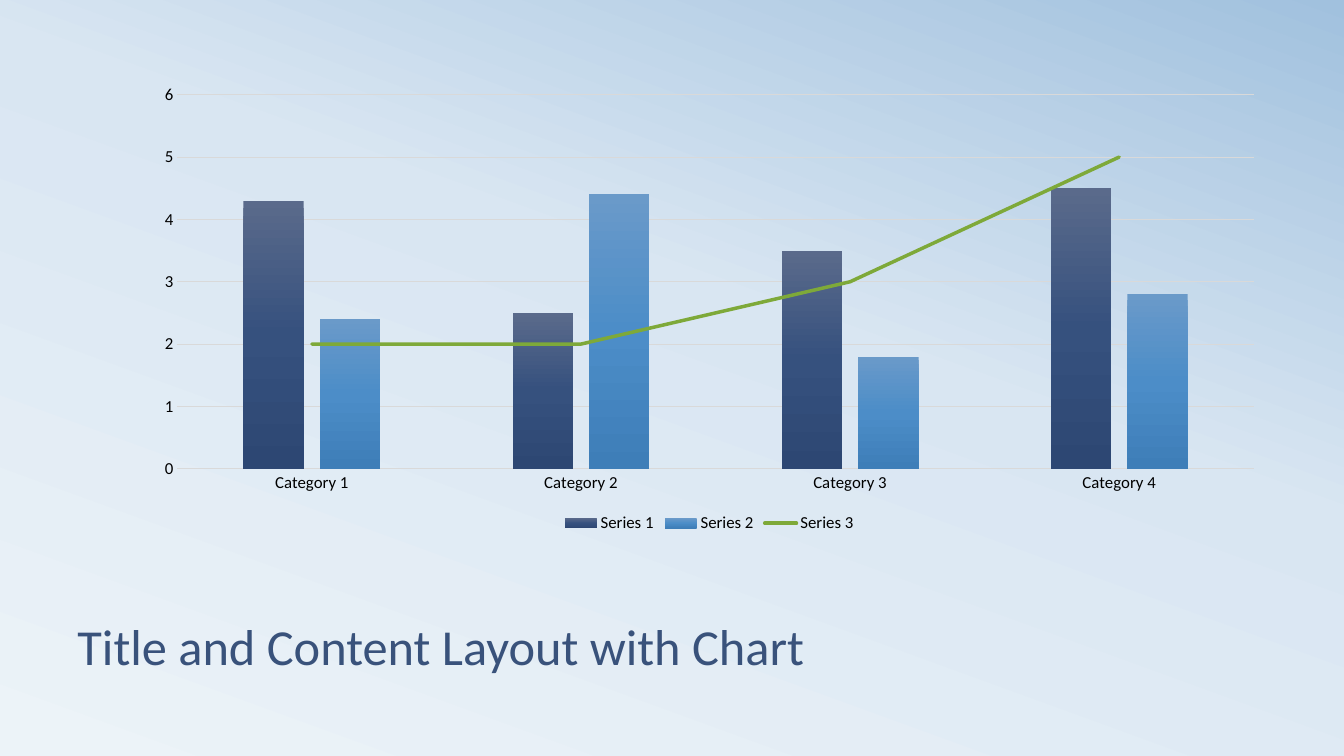
import copy

import pptx
import pptx.chart.data
import pptx.dml.color
import pptx.enum.chart
import pptx.enum.text
import pptx.oxml
import pptx.oxml.ns
import pptx.util

Inches = pptx.util.Inches
Pt = pptx.util.Pt
qn = pptx.oxml.ns.qn
enums = pptx.enum.chart

FACE = "Calibri"
GRID = "D9D9D9"
LABELS = ["Category 1", "Category 2", "Category 3", "Category 4"]
BARS = [
    ("Series 1", [4.3, 2.5, 3.5, 4.5], ["5A6A8B", "36517E", "2D4773"]),
    ("Series 2", [2.4, 4.4, 1.8, 2.8], ["6A9AC9", "4C8DC8", "3E7EB8"]),
]
TREND = ("Series 3", [2, 2, 3, 5], "7EA939")


def rgb(code):
    return pptx.dml.color.RGBColor.from_string(code)


def style(font, size, color):
    font.name = FACE
    font.size = Pt(size)
    font.color.rgb = rgb(color)


def stroke(line, color, width):
    line.color.rgb = rgb(color)
    line.width = Pt(width)


def blend(fill, root, stops, angle):
    """Fill with a gradient; root holds the fill's XML, angle is clockwise."""
    fill.gradient()
    fill.gradient_angle = 360 - angle
    nodes = root.find(".//" + qn("a:gsLst"))
    while len(nodes) < len(stops):
        nodes.append(copy.deepcopy(nodes[0]))
    for stop, (place, color) in zip(fill.gradient_stops, stops):
        stop.position = place
        stop.color.rgb = rgb(color)


def split_line(chart):
    """Move the last series to a line plot on the same axes."""
    bars = chart.element.find(".//" + qn("c:barChart"))
    series = bars.findall(qn("c:ser"))[-1]
    for flip in series.findall(qn("c:invertIfNegative")):
        series.remove(flip)
    plot = pptx.oxml.parse_xml(
        f'<c:lineChart {pptx.oxml.ns.nsdecls("c")}>'
        '<c:grouping val="standard"/><c:varyColors val="0"/></c:lineChart>'
    )
    plot.append(series)
    plot.append(pptx.oxml.parse_xml(
        f'<c:marker {pptx.oxml.ns.nsdecls("c")} val="1"/>'))
    for axis in bars.findall(qn("c:axId")):
        plot.append(copy.deepcopy(axis))
    bars.addnext(plot)


def format_axes(chart):
    for axis in (chart.category_axis, chart.value_axis):
        axis.major_tick_mark = enums.XL_TICK_MARK.NONE
        axis.minor_tick_mark = enums.XL_TICK_MARK.NONE
        style(axis.tick_labels.font, 12, "000000")
    stroke(chart.category_axis.format.line, GRID, 0.75)
    scale = chart.value_axis
    scale.minimum_scale, scale.maximum_scale, scale.major_unit = 0, 6, 1
    scale.format.line.fill.background()
    scale.has_major_gridlines = True
    stroke(scale.major_gridlines.format.line, GRID, 0.75)


def add_combo(slide, box):
    data = pptx.chart.data.CategoryChartData()
    data.categories = LABELS
    for name, values, _ in BARS + [TREND]:
        data.add_series(name, values)
    kind = enums.XL_CHART_TYPE.COLUMN_CLUSTERED
    chart = slide.shapes.add_chart(kind, *map(Inches, box), data).chart
    style(chart.font, 10, "404040")
    chart.has_title = False
    split_line(chart)
    format_axes(chart)

    columns, lines = chart.plots
    columns.gap_width, columns.overlap = 219, -27
    columns.vary_by_categories = False
    nodes = chart.element.findall(".//" + qn("c:ser"))
    for series, node, (_, _, colors) in zip(columns.series, nodes, BARS):
        series.invert_if_negative = False
        blend(series.format.fill, node, list(zip((0, 0.5, 1), colors)), 90)

    trend = lines.series[0]
    trend.smooth = False
    trend.marker.style = enums.XL_MARKER_STYLE.NONE
    stroke(trend.format.line, TREND[2], 2.5)
    trend.format.line.fill.solid()
    nodes[-1].find(".//" + qn("a:ln")).set("cap", "rnd")

    chart.has_legend = True
    chart.legend.position = enums.XL_LEGEND_POSITION.BOTTOM
    chart.legend.include_in_layout = False
    style(chart.legend.font, 12, "000000")


def add_title(slide, box, text):
    frame = slide.shapes.add_textbox(*map(Inches, box)).text_frame
    frame.word_wrap = True
    frame.vertical_anchor = pptx.enum.text.MSO_ANCHOR.BOTTOM
    para = frame.paragraphs[0]
    para.line_spacing = 0.8
    run = para.add_run()
    run.text = text
    style(run.font, 36, "39527B")


def main():
    deck = pptx.Presentation()
    deck.slide_width, deck.slide_height = Inches(13.33), Inches(7.5)
    slide = deck.slides.add_slide(deck.slide_layouts[6])
    sky = [(0, "ECF3F8"), (0.58, "D9E6F2"), (1, "A1C1DE")]
    blend(slide.background.fill, slide.element, sky, 290)
    add_combo(slide, (1.41, 0.75, 11.25, 4.58))
    add_title(slide, (0.67, 5.58, 12, 1.17),
              "Title and Content Layout with Chart")
    deck.save("out.pptx")


if __name__ == "__main__":
    main()
